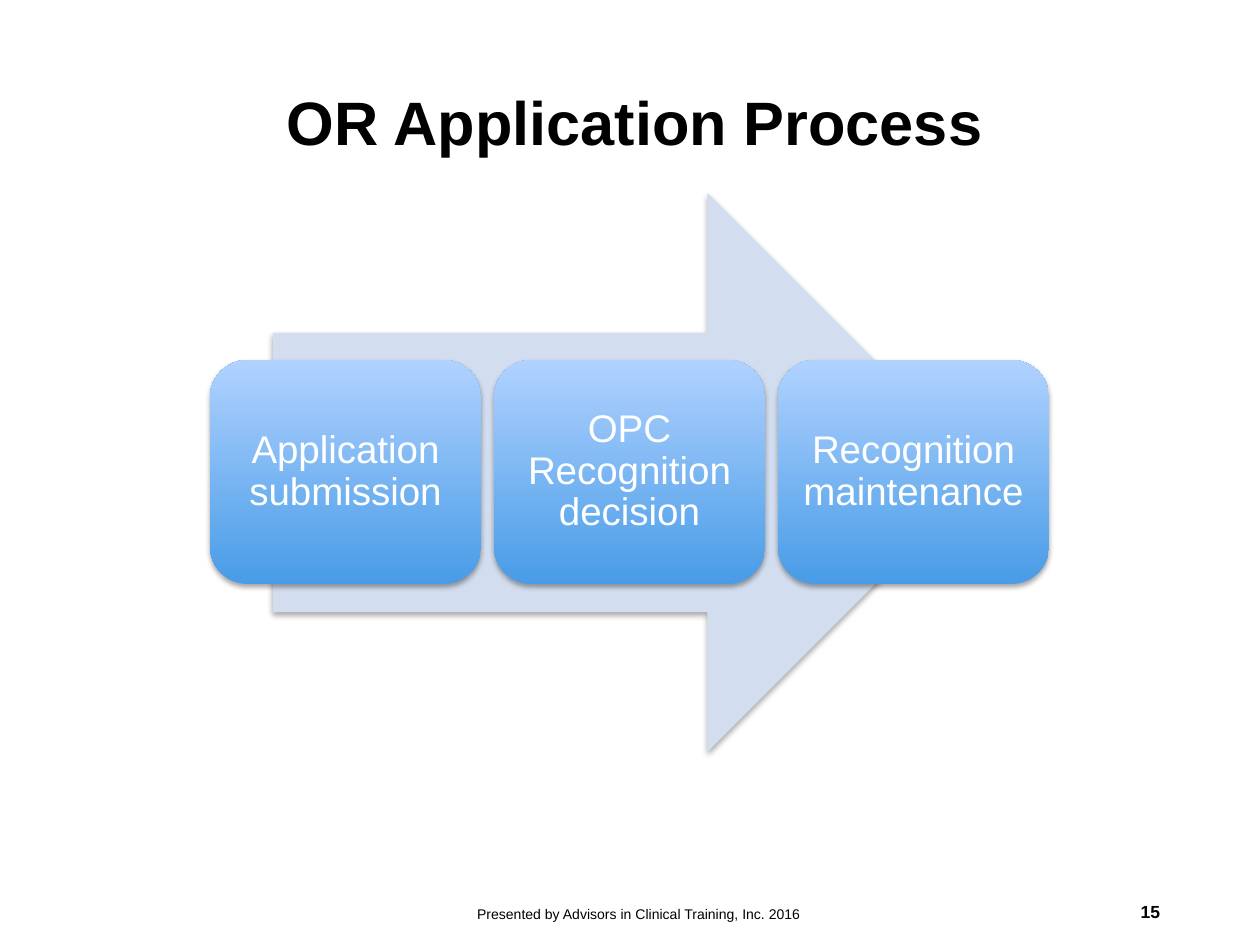
from lxml import etree
from pptx import Presentation
from pptx.dml.color import RGBColor
from pptx.enum.shapes import MSO_SHAPE
from pptx.enum.text import MSO_ANCHOR, PP_ALIGN
from pptx.oxml.ns import qn
from pptx.util import Emu, Pt

RIGHT_ARROW = MSO_SHAPE.RIGHT_ARROW
ROUNDED = MSO_SHAPE.ROUNDED_RECTANGLE
MIDDLE = MSO_ANCHOR.MIDDLE
LEFT, CENTER, RIGHT = PP_ALIGN.LEFT, PP_ALIGN.CENTER, PP_ALIGN.RIGHT

EMU_PER_PX = 914400 / 126
FONT = "Arial"
BLACK, WHITE = "000000", "FFFFFF"
ARROW_BLUE, STEP_DARK, STEP_LIGHT = "D2DEEF", "499CE7", "B0D2FF"

STEPS = ["Application submission", "OPC Recognition decision",
         "Recognition maintenance"]
STEP_LEFT, STEP_TOP, STEP_WIDTH, STEP_HEIGHT = 210, 360, 271, 224
STEP_PITCH = 284


def px(length):
    return Emu(round(length * EMU_PER_PX))


def rgb(color):
    return RGBColor.from_string(color)


def write(holder, text, size, color, bold=False, align=LEFT,
          spacing=1.0, insets=(13, 13, 13, 13)):
    frame = holder.text_frame
    frame.word_wrap = True
    frame.vertical_anchor = MIDDLE
    (frame.margin_left, frame.margin_top,
     frame.margin_right, frame.margin_bottom) = map(px, insets)
    paragraph = frame.paragraphs[0]
    paragraph.alignment = align
    paragraph.line_spacing = spacing
    run = paragraph.add_run()
    run.text = text
    run.font.name = FONT
    run.font.size = Pt(size)
    run.font.bold = bold
    run.font.color.rgb = rgb(color)


def add_label(slide, box, text, size, **style):
    label = slide.shapes.add_textbox(*map(px, box))
    write(label, text, size, BLACK, **style)


def add_soft_shadow(shape):
    shape.shadow.inherit = False
    effects = shape._element.spPr.find(qn("a:effectLst"))
    shadow = etree.SubElement(
        effects, qn("a:outerShdw"), blurRad=str(Pt(3.1)), dist=str(Pt(1.8)),
        dir="5400000", rotWithShape="0")
    tint = etree.SubElement(shadow, qn("a:srgbClr"), val=BLACK)
    etree.SubElement(tint, qn("a:alpha"), val="35000")


def add_block(slide, preset, box):
    block = slide.shapes.add_shape(preset, *map(px, box))
    block.line.fill.background()
    add_soft_shadow(block)
    return block


def add_arrow(slide, box):
    arrow = add_block(slide, RIGHT_ARROW, box)
    arrow.fill.solid()
    arrow.fill.fore_color.rgb = rgb(ARROW_BLUE)


def add_step(slide, box, text):
    step = add_block(slide, ROUNDED, box)
    step.fill.gradient()
    step.fill.gradient_angle = 90
    for stop, color in zip(step.fill.gradient_stops, (STEP_DARK, STEP_LIGHT)):
        stop.color.rgb = rgb(color)
    write(step, text, 22, WHITE, align=CENTER, spacing=0.9,
          insets=(11, 11, 11, 11))


def main():
    deck = Presentation()
    deck.slide_width, deck.slide_height = px(1260), px(945)
    slide = deck.slides.add_slide(deck.slide_layouts[6])

    # Title
    add_label(slide, (274, 34, 900, 183), "OR Application Process", 35,
              bold=True, spacing=0.9)

    # Process arrow with its steps
    add_arrow(slide, (273, 193, 714, 559))
    for index, text in enumerate(STEPS):
        left = STEP_LEFT + index * STEP_PITCH
        add_step(slide, (left, STEP_TOP, STEP_WIDTH, STEP_HEIGHT), text)

    # Footer and page number
    add_label(slide, (378, 869, 504, 90),
              "Presented by Advisors in Clinical Training, Inc. 2016", 8,
              align=CENTER, insets=(31, 13, 13, 13))
    add_label(slide, (890, 887, 283, 50), "15", 10, bold=True, align=RIGHT,
              insets=(13, 6, 13, 6))

    deck.save("out.pptx")


if __name__ == "__main__":
    main()
